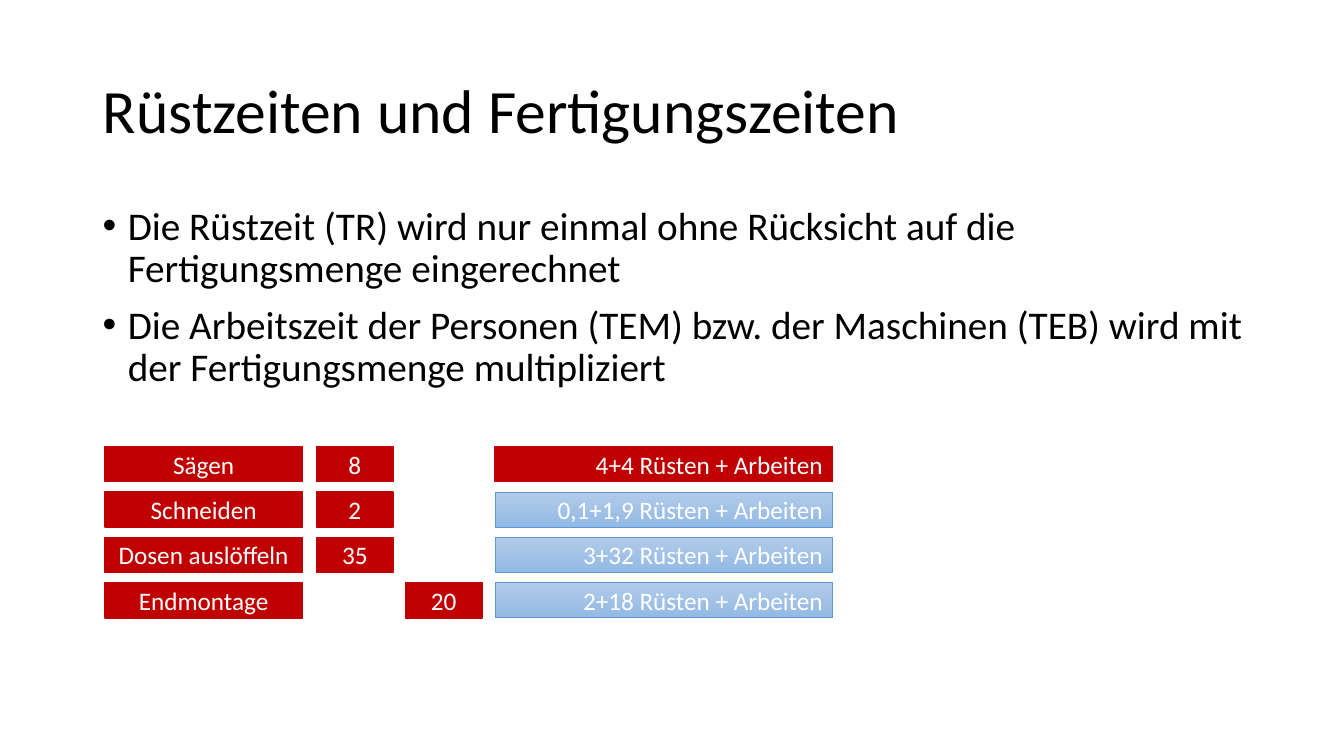
from dataclasses import dataclass

from lxml import etree
from pptx import Presentation
from pptx.dml.color import RGBColor
from pptx.enum.shapes import MSO_SHAPE
from pptx.enum.text import MSO_ANCHOR, MSO_AUTO_SIZE, PP_ALIGN
from pptx.oxml.ns import qn
from pptx.slide import Slide
from pptx.text.text import TextFrame, _Paragraph
from pptx.util import Inches, Pt

RECTANGLE = MSO_SHAPE.RECTANGLE
TOP, MIDDLE = MSO_ANCHOR.TOP, MSO_ANCHOR.MIDDLE
LEFT, CENTER, RIGHT = PP_ALIGN.LEFT, PP_ALIGN.CENTER, PP_ALIGN.RIGHT
NO_AUTOFIT = MSO_AUTO_SIZE.NONE


@dataclass(frozen=True)
class Theme:
    font: str = "Calibri"
    title_size: int = 44
    body_size: int = 28
    bar_size: int = 18
    text: str = "000000"
    bar_text: str = "FFFFFF"
    red: str = "C00000"
    blue_line: str = "5B9BD5"
    blue_gradient: tuple[str, str] = ("B1CBE9", "93B9E4")


@dataclass(frozen=True)
class Column:
    left: float
    width: float
    align: PP_ALIGN = CENTER


@dataclass(frozen=True)
class WorkStep:
    name: str
    minutes: str
    minutes_column: Column
    breakdown: str
    breakdown_is_red: bool = False


THEME = Theme()
NAME = Column(1.04, 1.96)
PARTS = Column(3.14, 0.76)
ASSEMBLY = Column(4.02, 0.76)
BREAKDOWN = Column(4.91, 3.35, RIGHT)
FIRST_ROW, ROW_PITCH, BAR_HEIGHT = 4.43, 0.45, 0.35

TITLE = "Rüstzeiten und Fertigungszeiten"
RULES = (
    "Die Rüstzeit (TR) wird nur einmal ohne Rücksicht auf die Fertigungsmenge eingerechnet",
    "Die Arbeitszeit der Personen (TEM) bzw. der Maschinen (TEB) wird mit "
    "der Fertigungsmenge multipliziert",
)
STEPS = (
    WorkStep("Sägen", "8", PARTS, "4+4 Rüsten + Arbeiten", True),
    WorkStep("Schneiden", "2", PARTS, "0,1+1,9 Rüsten + Arbeiten"),
    WorkStep("Dosen auslöffeln", "35", PARTS, "3+32 Rüsten + Arbeiten"),
    WorkStep("Endmontage", "20", ASSEMBLY, "2+18 Rüsten + Arbeiten"),
)


def apply_format(target: object, values: dict[str, object]) -> None:
    for attribute, value in values.items():
        setattr(target, attribute, value)


def format_frame(frame: TextFrame, anchor: MSO_ANCHOR) -> None:
    apply_format(frame, {"word_wrap": True, "auto_size": NO_AUTOFIT, "vertical_anchor": anchor})


def write(paragraph: _Paragraph, text: str, size: int, color: str, **layout: object) -> None:
    apply_format(paragraph, layout)
    run = paragraph.add_run()
    run.text = text
    apply_format(run.font, {"name": THEME.font, "size": Pt(size)})
    run.font.color.rgb = RGBColor.from_string(color)


def add_bullet(paragraph: _Paragraph) -> None:
    properties = paragraph._p.get_or_add_pPr()
    indent = Inches(0.25)
    properties.set("marL", str(indent))
    properties.set("indent", str(-indent))
    etree.SubElement(properties, qn("a:buFont"), typeface="Arial")
    etree.SubElement(properties, qn("a:buChar"), char="•")


def add_title(slide: Slide) -> None:
    title = slide.shapes.title
    apply_format(title, {"left": Inches(0.92), "top": Inches(0.4),
                         "width": Inches(11.5), "height": Inches(1.45)})
    format_frame(title.text_frame, MIDDLE)
    write(title.text_frame.paragraphs[0], TITLE, THEME.title_size, THEME.text,
          alignment=LEFT, line_spacing=0.9)


def add_rules(slide: Slide) -> None:
    frame = slide.shapes.add_textbox(
        Inches(0.92), Inches(2), Inches(11.5), Inches(2.01)).text_frame
    format_frame(frame, TOP)
    for index, rule in enumerate(RULES):
        paragraph = frame.add_paragraph() if index else frame.paragraphs[0]
        add_bullet(paragraph)
        write(paragraph, rule, THEME.body_size, THEME.text, alignment=LEFT,
              line_spacing=0.9, space_before=Pt(10 if index else 0))


def add_bar(slide: Slide, column: Column, top: float, text: str, is_red: bool = True) -> None:
    bar = slide.shapes.add_shape(RECTANGLE, Inches(column.left), Inches(top),
                                 Inches(column.width), Inches(BAR_HEIGHT))
    bar.shadow.inherit = False
    if is_red:
        bar.fill.solid()
        bar.fill.fore_color.rgb = RGBColor.from_string(THEME.red)
    else:
        bar.fill.gradient()
        bar.fill.gradient_angle = 270
        for stop, color in zip(bar.fill.gradient_stops, THEME.blue_gradient):
            stop.color.rgb = RGBColor.from_string(color)
    bar.line.color.rgb = RGBColor.from_string(THEME.red if is_red else THEME.blue_line)
    bar.line.width = Pt(1 if is_red else 0.5)
    format_frame(bar.text_frame, MIDDLE)
    write(bar.text_frame.paragraphs[0], text, THEME.bar_size, THEME.bar_text,
          alignment=column.align)


def main() -> None:
    presentation = Presentation()
    apply_format(presentation, {"slide_width": Inches(13.33), "slide_height": Inches(7.5)})
    title_only = presentation.slide_layouts.get_by_name("Title Only")
    slide = presentation.slides.add_slide(title_only)
    add_title(slide)
    add_rules(slide)
    for row, step in enumerate(STEPS):
        top = FIRST_ROW + row * ROW_PITCH
        add_bar(slide, NAME, top, step.name)
        add_bar(slide, step.minutes_column, top, step.minutes)
        add_bar(slide, BREAKDOWN, top, step.breakdown, step.breakdown_is_red)
    presentation.save("out.pptx")


if __name__ == "__main__":
    main()
